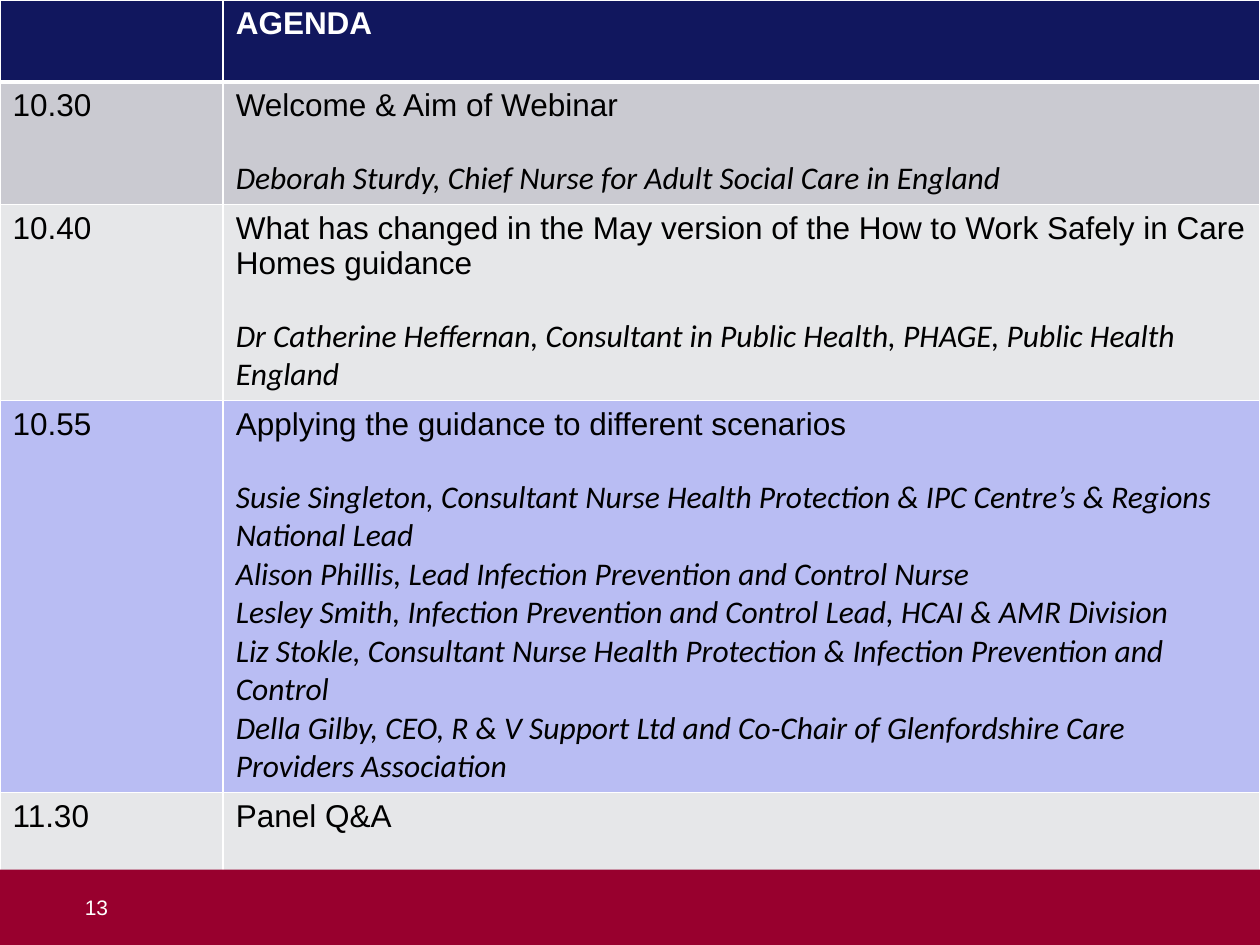
from pptx import Presentation
from pptx.dml.color import RGBColor as RGB
from pptx.enum.shapes import MSO_SHAPE as Kind
from pptx.enum.text import MSO_ANCHOR as Anchor, PP_ALIGN as Align
from pptx.oxml import parse_xml
from pptx.oxml.ns import nsdecls
from pptx.util import Cm, Pt

NAVY = RGB(0x11, 0x17, 0x5E)
GREY = RGB(0xCA, 0xCA, 0xD1)
PALE = RGB(0xE6, 0xE7, 0xE9)
LILAC = RGB(0xB9, 0xBD, 0xF3)
RED = RGB(0x98, 0x00, 0x2E)
WHITE = RGB(0xFF, 0xFF, 0xFF)
BLACK = RGB(0x00, 0x00, 0x00)

HEAD = dict(name="Arial", size=Pt(18), bold=True, italic=False)
TOPIC = dict(HEAD, bold=False)
NAME = dict(TOPIC, name="Calibri", italic=True)
PAGE = dict(TOPIC, size=Pt(12))
GAP = Pt(20.7)  # one line of 18 pt Arial

WIDTHS = (4.5, 20.9)
# height in cm, fill, time, topic, speakers
ROWS = [
    (1.65, NAVY, "", "AGENDA", []),
    (2.44, GREY, "10.30", "Welcome & Aim of Webinar",
     ["Deborah Sturdy, Chief Nurse for Adult Social Care in England"]),
    (3.91, PALE, "10.40",
     "What has changed in the May version of the How to Work Safely in Care Homes guidance",
     ["Dr Catherine Heffernan, Consultant in Public Health, PHAGE, Public Health England"]),
    (6.93, LILAC, "10.55", "Applying the guidance to different scenarios",
     ["Susie Singleton, Consultant Nurse Health Protection & IPC Centre’s & Regions National Lead",
      "Alison Phillis, Lead Infection Prevention and Control Nurse",
      "Lesley Smith, Infection Prevention and Control Lead, HCAI & AMR Division",
      "Liz Stokle, Consultant Nurse Health Protection & Infection Prevention and Control",
      "Della Gilby, CEO, R & V Support Ltd and Co-Chair of Glenfordshire Care "
      "Providers Association"]),
    (2.59, PALE, "11.30", "Panel Q&A", []),
]


def write(para, text, style, color):
    run = para.add_run()
    run.text = text
    for key, value in style.items():
        setattr(run.font, key, value)
    run.font.color.rgb = color


def edge(cell, base):
    """Draw white borders; base is the width of the lower one in points."""
    props = cell._tc.get_or_add_tcPr()
    for i, (side, width) in enumerate(dict(L=1, R=1, T=1, B=base).items()):
        props.insert(i, parse_xml(
            f'<a:ln{side} {nsdecls("a")} w="{Pt(width)}"><a:solidFill>'
            f'<a:srgbClr val="{WHITE}"/></a:solidFill></a:ln{side}>'))


def agenda(slide, left, top, width, height):
    table = slide.shapes.add_table(len(ROWS), len(WIDTHS), left, top, width, height).table
    for col, size in zip(table.columns, WIDTHS):
        col.width = Cm(size)
    for i, (tall, fill, time, topic, names) in enumerate(ROWS):
        table.rows[i].height = Cm(tall)
        style, color = (TOPIC, BLACK) if i else (HEAD, WHITE)
        for cell, text in zip(table.rows[i].cells, (time, topic)):
            cell.fill.solid()
            cell.fill.fore_color.rgb = fill
            # The heading has a heavier rule below it
            edge(cell, 1 if i else 3)
            if text:
                write(cell.text_frame.paragraphs[0], text, style, color)
        # Speakers stand one line below the topic
        frame = table.cell(i, 1).text_frame
        for j, name in enumerate(names):
            para = frame.add_paragraph()
            if j == 0:
                para.space_before = GAP
            write(para, name, NAME, BLACK)


def footer(slide, left, top, width, height):
    band = slide.shapes.add_shape(Kind.RECTANGLE, left, top, width, height)
    band.shadow.inherit = False
    band.fill.solid()
    band.fill.fore_color.rgb = RED
    band.line.fill.background()
    # Page number
    frame = band.text_frame
    form = dict(margin_left=Cm(1.71), margin_top=0, margin_bottom=0,
                vertical_anchor=Anchor.MIDDLE, word_wrap=True)
    for key, value in form.items():
        setattr(frame, key, value)
    para = frame.paragraphs[0]
    para.alignment = Align.LEFT
    write(para, "13", PAGE, WHITE)


def main():
    deck = Presentation()
    deck.slide_width, deck.slide_height = Cm(25.4), Cm(19.05)
    slide = deck.slides.add_slide(deck.slide_layouts[6])
    agenda(slide, 0, 0, deck.slide_width, Cm(sum(row[0] for row in ROWS)))
    band = Cm(1.52)
    footer(slide, 0, deck.slide_height - band, deck.slide_width, band)
    deck.save("out.pptx")


if __name__ == "__main__":
    main()
